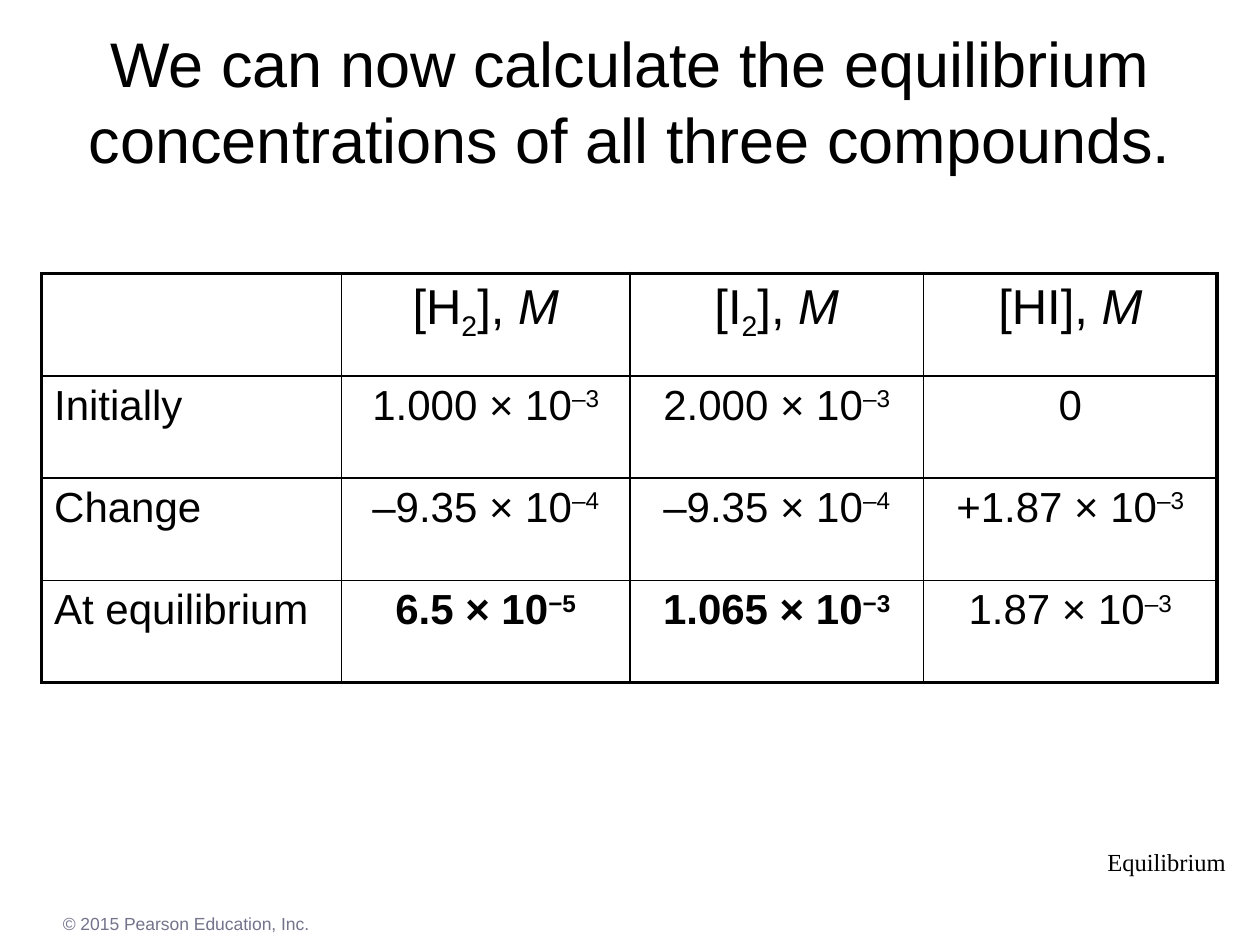
from dataclasses import dataclass

from lxml import etree
from pptx import Presentation
from pptx.dml.color import RGBColor
from pptx.enum.text import MSO_ANCHOR, PP_ALIGN
from pptx.oxml.ns import qn
from pptx.util import Inches, Pt

LEFT, CENTER = PP_ALIGN.LEFT, PP_ALIGN.CENTER
TOP, MIDDLE = MSO_ANCHOR.TOP, MSO_ANCHOR.MIDDLE


@dataclass(frozen=True)
class Theme:
    ink: str = "000000"
    muted: str = "73738C"
    sans: str = "Arial"
    serif: str = "Times New Roman"
    title: int = 36
    head: int = 28
    body: int = 24
    label: int = 14
    note: int = 10
    thin: float = 1
    thick: float = 2.25


THEME = Theme()
BASE = {"_": "-25000", "^": "30000"}


def write(par, text, size, color=THEME.ink, face=THEME.sans, align=LEFT):
    """Split text at | into runs; a leading _ is sub, ^ super, / italic."""
    par.alignment = align
    font = par.font
    font.size, font.name = Pt(size), face
    font.color.rgb = RGBColor.from_string(color)
    for part in text.split("|"):
        mark = part[:1]
        run = par.add_run()
        run.text = part.lstrip("_^/")
        if mark in BASE:
            run._r.get_or_add_rPr().set("baseline", BASE[mark])
        elif mark == "/":
            run.font.italic = True


def edge(cell, side, width):
    """Draw one border of a cell; side is L, R, T or B."""
    line = etree.SubElement(cell._tc.get_or_add_tcPr(), qn(f"a:ln{side}"), w=str(Pt(width)))
    fill = etree.SubElement(line, qn("a:solidFill"))
    etree.SubElement(fill, qn("a:srgbClr"), val=THEME.ink)


prs = Presentation()
prs.slide_width, prs.slide_height = Inches(10), Inches(7.5)
slide = prs.slides.add_slide(prs.slide_layouts[6])

# Title, chapter label and copyright line
texts = [
    ("We can now calculate the equilibrium concentrations of all three compounds.",
     (0, 0.17, 10, 1.25), THEME.title, THEME.ink, THEME.sans, CENTER, MIDDLE, True),
    ("Equilibrium",
     (8.69, 6.67, 1.14, 0.33), THEME.label, THEME.ink, THEME.serif, LEFT, TOP, False),
    ("© 2015 Pearson Education, Inc.",
     (0.4, 7.2, 9, 0.27), THEME.note, THEME.muted, THEME.sans, LEFT, TOP, True),
]
for text, place, size, color, face, align, anchor, wrap in texts:
    frame = slide.shapes.add_textbox(*map(Inches, place)).text_frame
    frame.word_wrap, frame.vertical_anchor = wrap, anchor
    write(frame.paragraphs[0], text, size, color, face, align)

# Concentration table
rows = [
    ["", "[H|_2|], |/M", "[I|_2|], |/M", "[HI], |/M"],
    ["Initially", "1.000 × 10|^–3", "2.000 × 10|^–3", "0"],
    ["Change", "–9.35 × 10|^–4", "–9.35 × 10|^–4", "+1.87 × 10|^–3"],
    ["At equilibrium", "6.5 × 10|^−5", "1.065 × 10|^−3", "1.87 × 10|^–3"],
]
bold = {(3, 1), (3, 2)}
widths = [2.38, 2.29, 2.33, 2.33]
last_row, last_col = len(rows) - 1, len(widths) - 1

table = slide.shapes.add_table(
    len(rows), len(widths), Inches(0.33), Inches(2.17), Inches(sum(widths)), Inches(3.25)
).table
table.first_row = table.horz_banding = False
for col, width in zip(table.columns, widths):
    col.width = Inches(width)

for r, row in enumerate(rows):
    for c, text in enumerate(row):
        cell = table.cell(r, c)
        par = cell.text_frame.paragraphs[0]
        if text:
            write(par, text, THEME.body if r else THEME.head, align=CENTER if c else LEFT)
            par.font.bold = (r, c) in bold
        outer = {"L": c == 0, "R": c == last_col, "T": r == 0, "B": r == last_row}
        for side, rim in outer.items():
            edge(cell, side, THEME.thick if rim else THEME.thin)
        cell.fill.background()

prs.save("out.pptx")
